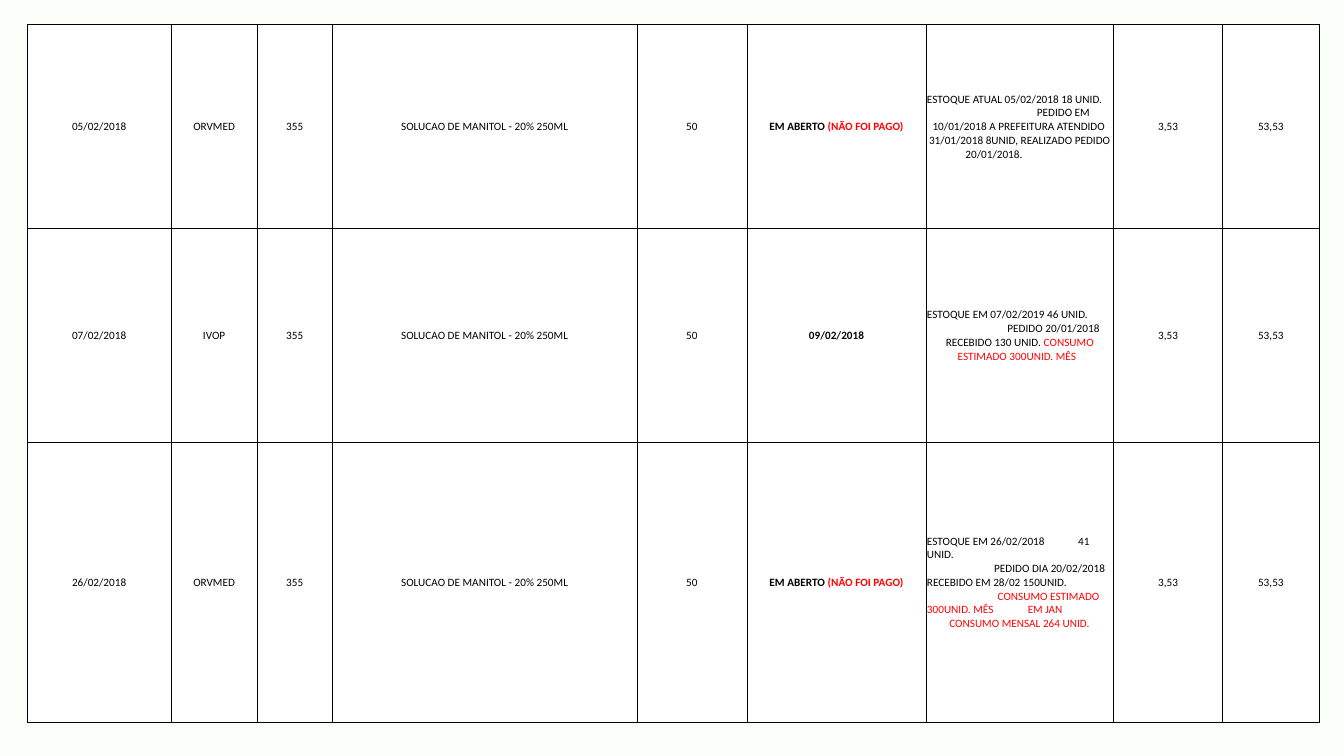
"""Build a slide with a table of supply loans and their stock notes."""
from dataclasses import dataclass

from lxml.etree import SubElement
from pptx import Presentation
from pptx.dml.color import RGBColor
from pptx.enum.text import MSO_ANCHOR, PP_ALIGN
from pptx.enum.shapes import MSO_SHAPE
from pptx.oxml.ns import qn
from pptx.util import Pt

COLORS = {"black": "000000", "red": "FF0000", "white": "FFFFFF", "wash": "F7FCF2"}
FONT = "Calibri"
WIDTHS = [103, 61.2, 54, 217.4, 78.5, 128.2, 133.9, 77.8, 69]
STATE, NOTES = 5, 6


@dataclass(frozen=True)
class Line:
    """One line of a note: black text, then red text, with indent and tab stop."""
    black: str
    red: str = ""
    left: float = 0
    tab: float = 0


@dataclass(frozen=True)
class Loan:
    """One row of the table."""
    date: str
    place: str
    state: Line
    notes: list[Line]
    height: float


OPEN = Line("EM ABERTO ", "(NÃO FOI PAGO)")
LOANS = [
    Loan("05/02/2018", "ORVMED", OPEN, [
        Line("ESTOQUE ATUAL 05/02/2018 18 UNID."),
        Line("PEDIDO EM", left=78.5),
        Line("10/01/2018 A PREFEITURA ATENDIDO", left=4),
        Line("31/01/2018 8UNID, REALIZADO PEDIDO", left=1.5),
        Line("20/01/2018.", left=27.5),
    ], 146),
    Loan("07/02/2018", "IVOP", Line("09/02/2018"), [
        Line("ESTOQUE EM 07/02/2019 46 UNID."),
        Line("PEDIDO 20/01/2018", left=57.5),
        Line("RECEBIDO 130 UNID. ", "CONSUMO", left=13.5),
        Line("", "ESTIMADO 300UNID. MÊS", left=22),
    ], 152.6),
    Loan("26/02/2018", "ORVMED", OPEN, [
        Line("ESTOQUE EM 26/02/2018\t41 UNID.", tab=98.5),
        Line("PEDIDO DIA 20/02/2018", left=48),
        Line("RECEBIDO EM 28/02 150UNID."),
        Line("", "CONSUMO ESTIMADO", left=50.5),
        Line("", "300UNID. MÊS\tEM JAN", tab=106.5),
        Line("", "CONSUMO MENSAL 264 UNID.", left=16),
    ], 200),
]


def tint(fill, name: str) -> None:
    """Fill with a named colour."""
    fill.solid()
    fill.fore_color.rgb = RGBColor.from_string(COLORS[name])


def style(run, name: str, bold: bool) -> None:
    """Set the font of a run."""
    font = run.font
    font.name, font.size, font.bold = FONT, Pt(8), bold
    font.color.rgb = RGBColor.from_string(COLORS[name])


def frame(cell) -> None:
    """Give a cell thin black borders, a white fill and tight margins."""
    props = cell._tc.get_or_add_tcPr()
    for side in "LRTB":
        edge = SubElement(props, qn(f"a:ln{side}"), w=str(Pt(0.5)))
        fill = SubElement(edge, qn("a:solidFill"))
        SubElement(fill, qn("a:srgbClr"), val=COLORS["black"])
    tint(cell.fill, "white")
    cell.vertical_anchor = MSO_ANCHOR.MIDDLE
    cell.margin_left = cell.margin_right = cell.margin_top = Pt(0.5)
    cell.margin_bottom = Pt(0)


def write(cell, lines: list[Line], align: PP_ALIGN, bold: bool) -> None:
    """Write lines into a cell, one paragraph each."""
    cell.text_frame.text = "\n".join(line.black or line.red for line in lines)
    for para, line in zip(cell.text_frame.paragraphs, lines):
        para.alignment = align
        props = para._p.get_or_add_pPr()
        props.set("marL", str(Pt(line.left)))
        props.set("indent", "0")
        if line.tab:
            tabs = SubElement(props, qn("a:tabLst"))
            SubElement(tabs, qn("a:tab"), pos=str(Pt(line.tab)), algn="l")
        style(para.runs[0], "black" if line.black else "red", bold)
        if line.black and line.red:
            tail = para.add_run()
            tail.text = line.red
            style(tail, "red", bold)


def add_wash(slide, width: int, height: int) -> None:
    """Lay a sheer tint over the whole slide."""
    wash = slide.shapes.add_shape(MSO_SHAPE.RECTANGLE, 0, 0, width, height)
    wash.shadow.inherit = False
    wash.line.fill.background()
    tint(wash.fill, "wash")
    color = wash._element.spPr.find(f".//{qn('a:srgbClr')}")
    SubElement(color, qn("a:alpha"), val="44000")


def add_loans(slide) -> None:
    """Add the table of loans."""
    total = sum(loan.height for loan in LOANS)
    table = slide.shapes.add_table(
        len(LOANS), len(WIDTHS), Pt(19.4), Pt(17.3), Pt(sum(WIDTHS)), Pt(total)).table
    table.first_row = table.horz_banding = False
    for col, width in zip(table.columns, WIDTHS):
        col.width = Pt(width)
    for row, loan in zip(table.rows, LOANS):
        row.height = Pt(loan.height)
        plain = [loan.date, loan.place, "355", "SOLUCAO DE MANITOL - 20% 250ML", "50"]
        items = [[Line(text)] for text in plain]
        items += [[loan.state], loan.notes, [Line("3,53")], [Line("53,53")]]
        for spot, (cell, lines) in enumerate(zip(row.cells, items)):
            frame(cell)
            align = PP_ALIGN.LEFT if spot == NOTES else PP_ALIGN.CENTER
            write(cell, lines, align, spot == STATE)


def main() -> None:
    """Build and save the slide."""
    deck = Presentation()
    deck.slide_width, deck.slide_height = Pt(960), Pt(540)
    slide = deck.slides.add_slide(deck.slide_layouts[6])
    add_wash(slide, deck.slide_width, deck.slide_height)
    add_loans(slide)
    deck.save("out.pptx")


if __name__ == "__main__":
    main()
